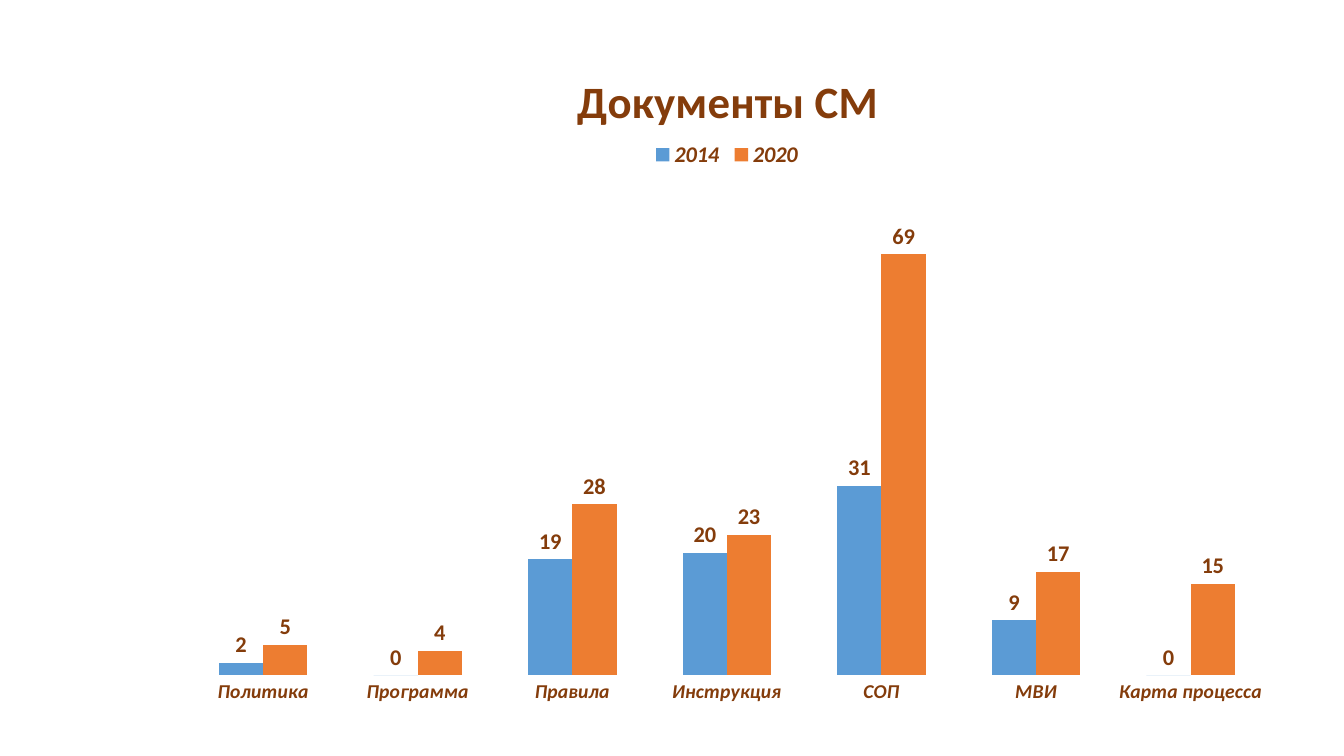
from pptx import Presentation
from pptx import util as u
from pptx.chart.data import CategoryChartData
from pptx.dml.color import RGBColor
from pptx.enum import chart as c
from pptx.oxml import parse_xml
from pptx.oxml.ns import nsdecls

BROWN = RGBColor(0x84, 0x3C, 0x0B)
BLUE = RGBColor(0x5B, 0x9B, 0xD5)
ORANGE = RGBColor(0xED, 0x7D, 0x31)

PX = 9144  # EMU per px, 100 px to the inch

DOCUMENT_TYPES = ["Политика", "Программа", "Правила", "Инструкция",
                  "СОП", "МВИ", "Карта процесса"]
DOCUMENT_COUNTS = [
    ("2014", BLUE, [2, 0, 19, 20, 31, 9, 0]),
    ("2020", ORANGE, [5, 4, 28, 23, 69, 17, 15]),
]


def layout(x, y, w=None, h=None, inner=False):
    """Return a manual chart layout, in fractions of the chart area."""
    target = '<c:layoutTarget val="inner"/>' if inner else ""
    modes = '<c:xMode val="edge"/><c:yMode val="edge"/>'
    sizes = "".join(f'<c:{name} val="{value}"/>'
                    for name, value in zip("xywh", (x, y, w, h))
                    if value is not None)
    return parse_xml(f'<c:layout {nsdecls("c")}><c:manualLayout>'
                     f'{target}{modes}{sizes}</c:manualLayout></c:layout>')


class SlideBuilder:
    def __init__(self, presentation):
        self.slide = presentation.slides.add_slide(presentation.slide_layouts[6])
        self.font_name = "Calibri"
        self.color = BROWN

    def style(self, font, size, italic=False):
        font.name = self.font_name
        font.size = u.Pt(size)
        font.bold = True
        font.italic = italic
        font.color.rgb = self.color

    def column_chart(self, left, top, width, height, categories, series_rows):
        data = CategoryChartData()
        data.categories = categories
        for name, _, values in series_rows:
            data.add_series(name, values)
        chart = self.slide.shapes.add_chart(
            c.XL_CHART_TYPE.COLUMN_CLUSTERED,
            *(length * PX for length in (left, top, width, height)), data).chart
        self.style(chart.font, 16)

        plot = chart.plots[0]
        plot.gap_width = 150
        plot.overlap = 0
        plot.vary_by_categories = False
        for series, (_, color, _) in zip(plot.series, series_rows):
            series.format.fill.solid()
            series.format.fill.fore_color.rgb = color
            labels = series.data_labels
            labels.show_value = True
            labels.position = c.XL_LABEL_POSITION.OUTSIDE_END
            self.style(labels.font, 16)

        category_axis = chart.category_axis
        category_axis.major_tick_mark = c.XL_TICK_MARK.NONE
        category_axis.format.line.fill.background()
        self.style(category_axis.tick_labels.font, 14, italic=True)

        value_axis = chart.value_axis
        value_axis.minimum_scale = 0
        value_axis.maximum_scale = 80
        value_axis.has_major_gridlines = False
        value_axis.visible = False

        plot_area = chart.plots[0]._element.getparent()
        for old_layout in plot_area.findall("{*}layout"):
            plot_area.remove(old_layout)
        plot_area.insert(0, layout(0.02, 0.232, 0.96, 0.708, inner=True))
        return chart

    def chart_title(self, chart, title, x, y):
        chart.has_title = True
        frame = chart.chart_title.text_frame
        frame.text = title
        self.style(frame.paragraphs[0].font, 32)
        chart.chart_title.include_in_layout = False
        element = chart.chart_title._element
        for old_layout in element.findall("{*}layout"):
            element.remove(old_layout)
        element.find("{*}tx").addnext(layout(x, y))

    def chart_legend(self, chart, x, y, w, h):
        chart.has_legend = True
        legend = chart.legend
        legend.position = c.XL_LEGEND_POSITION.TOP
        legend.include_in_layout = False
        self.style(legend.font, 16, italic=True)
        element = legend._element
        for old_layout in element.findall("{*}layout"):
            element.remove(old_layout)
        element.find("{*}legendPos").addnext(layout(x, y, w, h))


def main():
    presentation = Presentation()
    presentation.slide_width = 1333 * PX
    presentation.slide_height = 750 * PX
    builder = SlideBuilder(presentation)
    chart = builder.column_chart(162, 27, 1118, 684, DOCUMENT_TYPES, DOCUMENT_COUNTS)
    builder.chart_title(chart, "Документы СМ", 0.36, 0.05)
    builder.chart_legend(chart, 0.43, 0.16, 0.14, 0.05)
    presentation.save("out.pptx")


if __name__ == "__main__":
    main()
